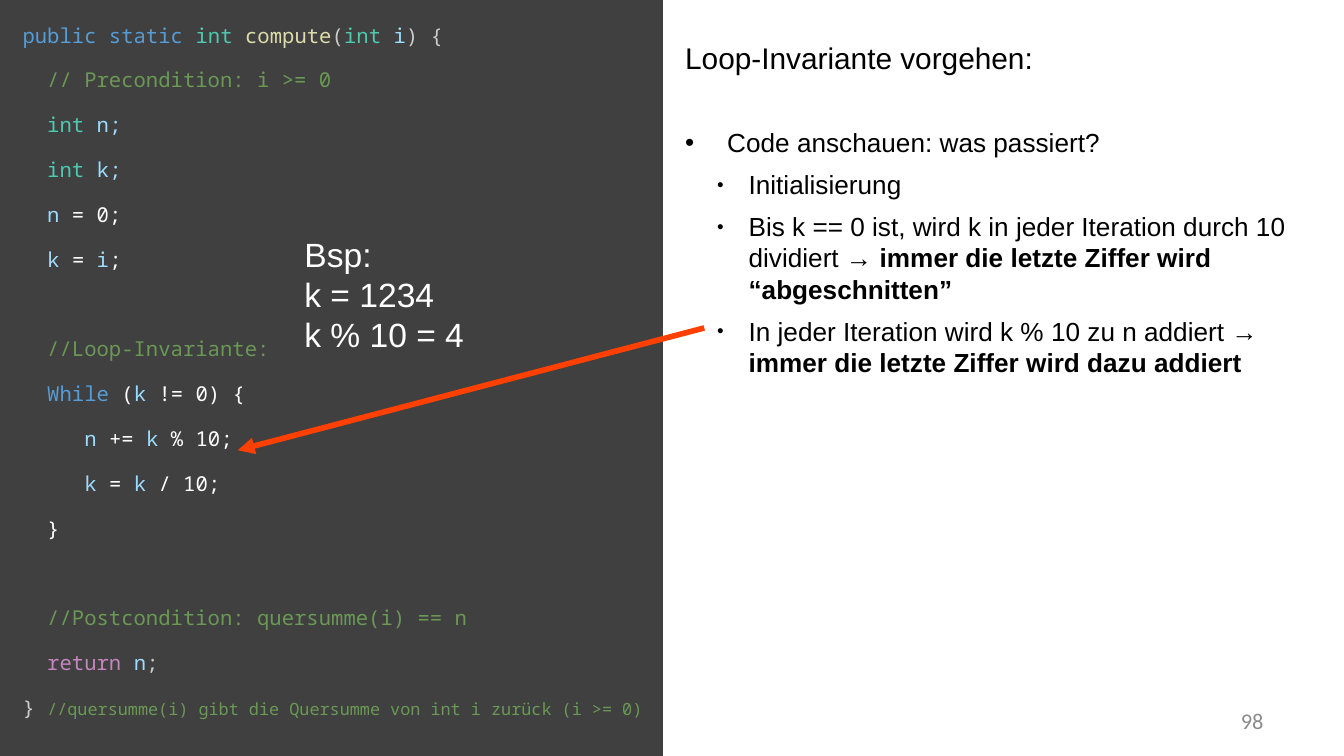
from dataclasses import dataclass

import lxml.etree
import pptx
import pptx.dml.color
import pptx.enum.shapes
import pptx.enum.text
import pptx.oxml.ns
import pptx.util

Pt = pptx.util.Pt

COLOURS = {
    "panel": "404040",
    "keyword": "569CD6",
    "type": "4EC9B0",
    "function": "DCDCAA",
    "plain": "CCCCCC",
    "variable": "9CDCFE",
    "comment": "6A9955",
    "control": "C586C0",
    "white": "FFFFFF",
    "black": "000000",
    "arrow": "FF4000",
    "number": "8B8B8B",
}


@dataclass
class Span:
    text: str
    colour: str = "black"
    size: float = 14
    font: str = "Arial"
    bold: bool = False


@dataclass
class Line:
    spans: list[Span]
    before: float = 0
    after: float = 0
    spacing: float | None = None
    level: int = 0
    bullet: str = ""
    margin: float = 0
    hanging: float = 0
    bullet_percent: int = 100
    align: pptx.enum.text.PP_ALIGN | None = None


def rgb(name: str) -> pptx.dml.color.RGBColor:
    return pptx.dml.color.RGBColor.from_string(COLOURS[name])


def add_child(parent, tag: str, **attributes: str):
    child = lxml.etree.SubElement(parent, pptx.oxml.ns.qn(tag))
    for key, value in attributes.items():
        child.set(key, value)
    return child


def add_bullet(para, line: Line) -> None:
    properties = para._p.get_or_add_pPr()
    properties.set("marL", str(Pt(line.margin)))
    properties.set("indent", str(-Pt(line.hanging)))
    colour = add_child(properties, "a:buClr")
    add_child(colour, "a:srgbClr", val=COLOURS["black"])
    add_child(properties, "a:buSzPct", val=str(line.bullet_percent * 1000))
    add_child(properties, "a:buFont", typeface="Arial")
    add_child(properties, "a:buChar", char=line.bullet)


def add_text(page, left: float, top: float, width: float, height: float,
             lines: list[Line], middle: bool = False) -> None:
    box = page.shapes.add_textbox(Pt(left), Pt(top), Pt(width), Pt(height))
    frame = box.text_frame
    frame.word_wrap = True
    if middle:
        frame.vertical_anchor = pptx.enum.text.MSO_ANCHOR.MIDDLE
    for index, line in enumerate(lines):
        para = frame.add_paragraph() if index else frame.paragraphs[0]
        para.level = line.level
        if line.bullet:
            add_bullet(para, line)
        para.space_before = Pt(line.before)
        para.space_after = Pt(line.after)
        if line.spacing:
            para.line_spacing = Pt(line.spacing)
        if line.align is not None:
            para.alignment = line.align
        for span in line.spans:
            run = para.add_run()
            run.text = span.text
            run.font.name = span.font
            run.font.size = Pt(span.size)
            run.font.bold = span.bold
            run.font.color.rgb = rgb(span.colour)


def code(*tokens: tuple[str, str], blank_before: bool = False) -> Line:
    spans = [Span(text, colour, 11, "Noto Sans Mono") for text, colour in tokens]
    return Line(spans, before=24 if blank_before else 0, spacing=24)


def declaration(name: str) -> Line:
    return code(("  int ", "type"), (f"{name};", "variable"))


def step(*spans: Span) -> Line:
    return Line(list(spans), 2.8, 2.8, level=1, bullet="●",
                margin=34, hanging=17, bullet_percent=45)


def add_panel(page) -> None:
    panel = page.shapes.add_shape(
        pptx.enum.shapes.MSO_SHAPE.RECTANGLE, Pt(0), Pt(0), Pt(354.3), Pt(405))
    panel.shadow.inherit = False
    panel.fill.solid()
    panel.fill.fore_color.rgb = rgb("panel")
    panel.line.color.rgb = rgb("panel")
    panel.line.width = Pt(2)


def add_arrow(page) -> None:
    arrow = page.shapes.add_connector(
        pptx.enum.shapes.MSO_CONNECTOR.STRAIGHT,
        Pt(377.3), Pt(175.7), Pt(127.4), Pt(241.2))
    arrow.line.color.rgb = rgb("arrow")
    arrow.line.width = Pt(3)
    add_child(arrow.line._get_or_add_ln(), "a:tailEnd", type="triangle")
    add_child(arrow._element.spPr, "a:effectLst")


def main() -> None:
    deck = pptx.Presentation()
    deck.slide_width, deck.slide_height = Pt(720), Pt(405)
    page = deck.slides.add_slide(deck.slide_layouts[6])

    add_panel(page)
    listing = [
        code(("public static ", "keyword"), ("int ", "type"), ("compute", "function"),
             ("(", "plain"), ("int ", "type"), ("i", "variable"), (") {", "plain")),
        code(("  // Precondition: i >= 0", "comment")),
        declaration("n"),
        declaration("k"),
        code(("  n", "variable"), (" = 0;", "white")),
        code(("  k ", "variable"), ("= ", "white"), ("i", "variable"), (";", "white")),
        code(("  //Loop-Invariante:", "comment"), blank_before=True),
        code(("  While ", "keyword"), ("(", "white"), ("k", "variable"),
             (" != 0) {", "white")),
        code(("     n", "variable"), (" += ", "white"), ("k ", "variable"),
             ("% 10;", "white")),
        code(("     k", "variable"), (" = ", "white"), ("k", "variable"),
             (" / 10;", "white")),
        code(("  }", "white")),
        code(("  //Postcondition: quersumme(i) == n", "comment"), blank_before=True),
        code(("  return ", "control"), ("n", "variable"), (";", "plain")),
        code(("} ", "plain")),
    ]
    listing[-1].spans.append(Span(
        "//quersumme(i) gibt die Quersumme von int i zurück (i >= 0)",
        "comment", 9, "Noto Sans Mono"))
    add_text(page, 5, -2.2, 402.5, 463, listing)

    add_text(page, 360, 17.9, 360, 235.5, [
        Line([Span("Loop-Invariante vorgehen:", size=16)], after=24.5),
        Line([Span("Code anschauen: was passiert?")], 2.8, 2.8,
             bullet="•", margin=22.5, hanging=22.5),
        step(Span("Initialisierung")),
        step(Span("Bis k == 0 ist, wird k in jeder Iteration durch 10 dividiert → "),
             Span("immer die letzte Ziffer wird “abgeschnitten”", bold=True)),
        step(Span("In jeder Iteration wird k % 10 zu n addiert → "),
             Span("immer die letzte Ziffer wird dazu addiert", bold=True)),
    ])

    add_arrow(page)
    add_text(page, 156, 121.7, 170, 67.7, [
        Line([Span(text, "white", 18)]) for text in ("Bsp:", "k = 1234", "k % 10 = 4")])
    add_text(page, 516.2, 375.1, 167.8, 21.6, [
        Line([Span("98", "number", 12, "Calibri")],
             align=pptx.enum.text.PP_ALIGN.RIGHT)], middle=True)

    deck.save("out.pptx")


if __name__ == "__main__":
    main()
